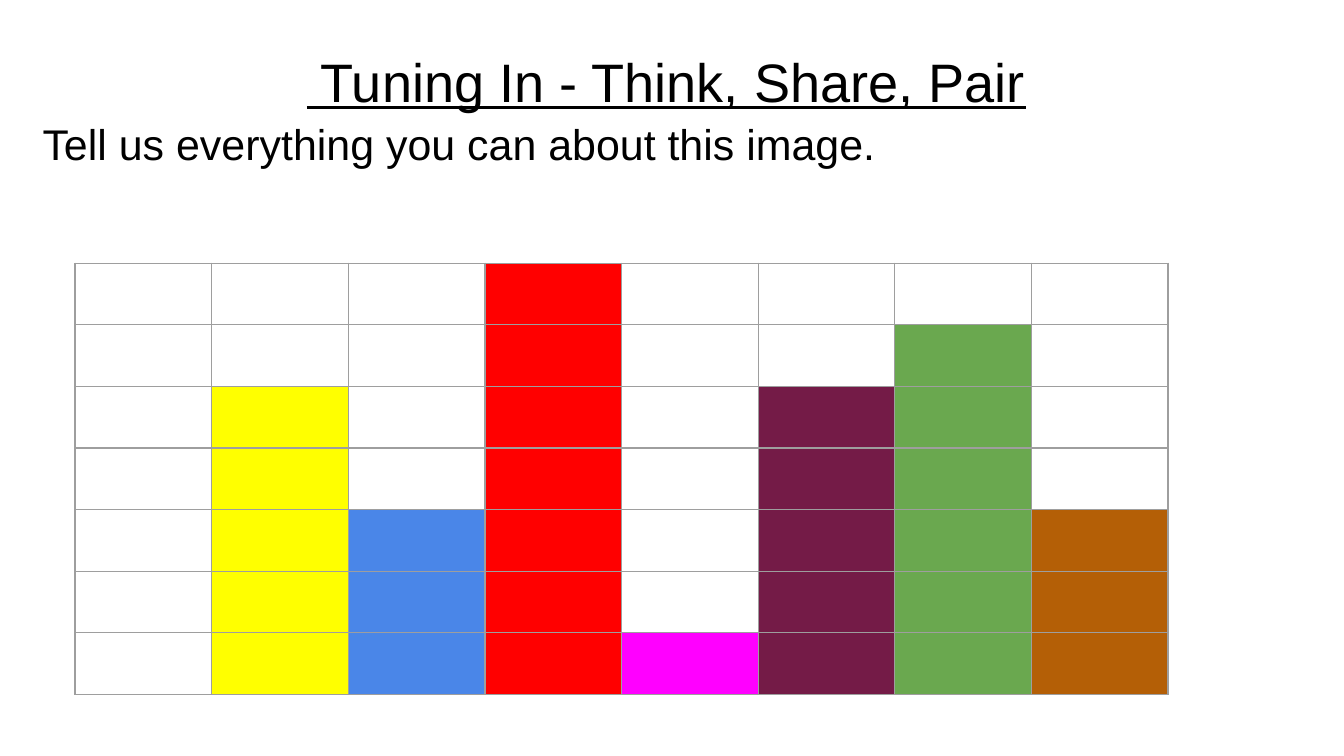
from lxml.etree import SubElement
from pptx import Presentation
from pptx.dml.color import RGBColor
from pptx.enum.text import MSO_ANCHOR, MSO_AUTO_SIZE, PP_ALIGN
from pptx.oxml.ns import qn
from pptx.util import Pt

PX = 7620  # EMU per px, 120 px to the inch
COLORS = {
    "text": "000000", "grid": "9E9E9E", "yellow": "FFFF00", "blue": "4A86E8",
    "red": "FF0000", "magenta": "FF00FF", "plum": "741B47",
    "green": "6AA84F", "brown": "B45F06",
}


def add_borders(cell, color, width):
    properties = cell._tc.get_or_add_tcPr()
    for position, side in enumerate(("lnL", "lnR", "lnT", "lnB")):
        line = properties.makeelement(qn(f"a:{side}"), {"w": str(width)})
        fill = SubElement(line, qn("a:solidFill"))
        SubElement(fill, qn("a:srgbClr"), val=color)
        properties.insert(position, line)  # borders come before the fill


presentation = Presentation()
presentation.slide_width = 1200 * PX
presentation.slide_height = 675 * PX
slide = presentation.slides.add_slide(presentation.slide_layouts[5])

# Heading and prompt
heading = slide.shapes.title
box = {"left": 26, "top": 25, "width": 1138, "height": 630}
for name, value in box.items():
    setattr(heading, name, value * PX)
text_frame = heading.text_frame
frame_format = {
    "word_wrap": True, "auto_size": MSO_AUTO_SIZE.NONE,
    "vertical_anchor": MSO_ANCHOR.TOP,
    "margin_left": 12 * PX, "margin_right": 12 * PX,
    "margin_top": 12 * PX, "margin_bottom": 12 * PX,
}
for name, value in frame_format.items():
    setattr(text_frame, name, value)

lines = [
    (" Tuning In - Think, Share, Pair", PP_ALIGN.CENTER, {"size": Pt(29), "underline": True}),
    ("Tell us everything you can about this image.", PP_ALIGN.LEFT, {"size": Pt(23), "underline": False}),
]
text_frame.text = "\n".join(text for text, _, _ in lines)
for paragraph, (_, alignment, font_format) in zip(text_frame.paragraphs, lines):
    paragraph.alignment = alignment
    paragraph.line_spacing = 1.1
    font = paragraph.runs[0].font
    for name, value in {"name": "Arial", **font_format}.items():
        setattr(font, name, value)
    font.color.rgb = RGBColor.from_string(COLORS["text"])

# Bar grid: colour and height in cells of each column
bars = [
    (None, 0), ("yellow", 5), ("blue", 3), ("red", 7),
    ("magenta", 1), ("plum", 5), ("green", 6), ("brown", 3),
]
row_count, column_width, row_height = 7, 122, 55
table = slide.shapes.add_table(
    row_count, len(bars), 67 * PX, 235 * PX,
    len(bars) * column_width * PX, row_count * row_height * PX,
).table
table.first_row = table.horz_banding = False

for column, (color, bar_height) in enumerate(bars):
    for row in range(row_count):
        cell = table.cell(row, column)
        if row >= row_count - bar_height:
            cell.fill.solid()
            cell.fill.fore_color.rgb = RGBColor.from_string(COLORS[color])
        else:
            cell.fill.background()
        add_borders(cell, COLORS["grid"], Pt(0.75))

presentation.save("out.pptx")
